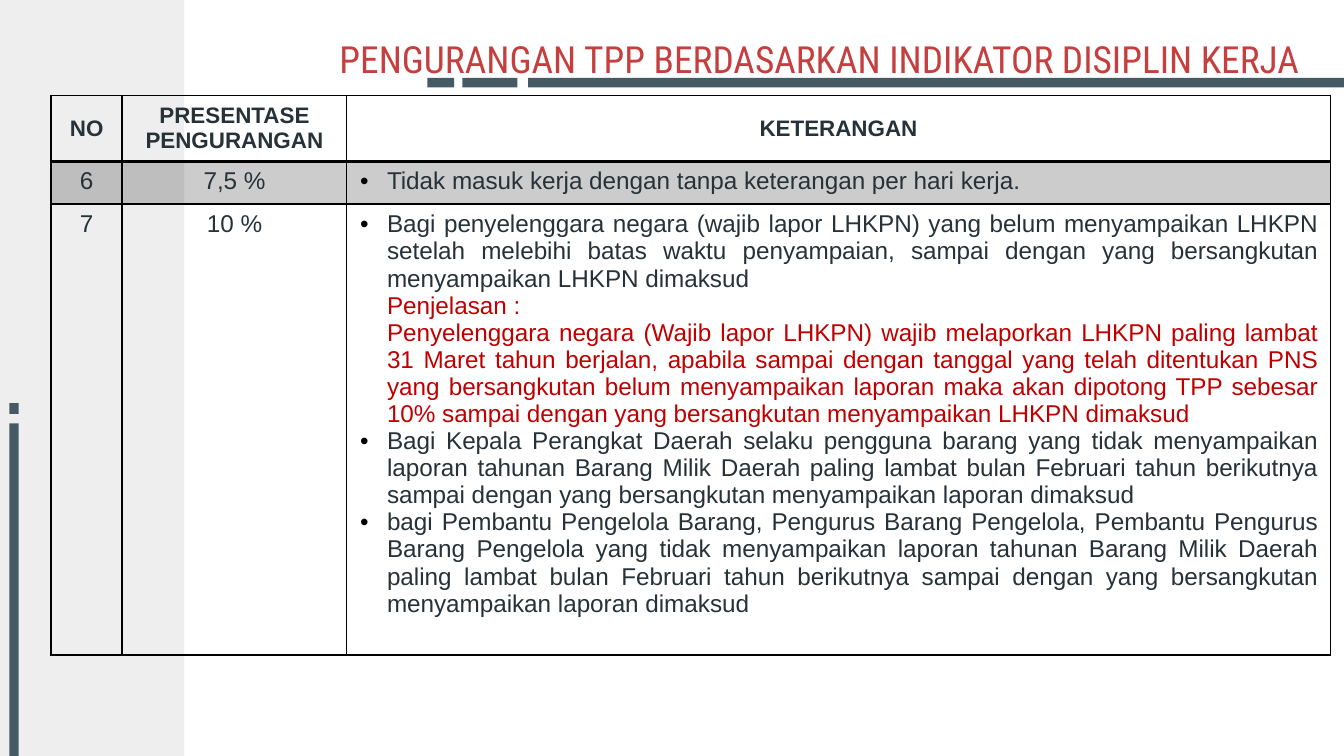
from lxml import etree
from pptx import Presentation
from pptx.dml.color import RGBColor
from pptx.enum import shapes, text
from pptx.oxml.ns import qn
from pptx.util import Inches, Pt

PALE = RGBColor(0xEE, 0xEE, 0xEE)
SLATE = RGBColor(0x45, 0x5A, 0x64)
TITLE_RED = RGBColor(0xC5, 0x3F, 0x3F)
NOTE_RED = RGBColor(0xC0, 0x00, 0x00)
INK = RGBColor(0x26, 0x32, 0x38)
BLACK = RGBColor(0, 0, 0)

SLIDE_W = 10
SLIDE_H = SLIDE_W * 9 / 16
BAR = 0.07  # thickness of the decorative bars
INDENT = 0.2
COLUMNS = (0.53, 1.67, 7.32)
ROWS = (0.49, 0.32, 3.31)
HEADERS = ("NO", "PRESENTASE\nPENGURANGAN", "KETERANGAN")

# Each remark is (text, is it a bulleted point?)
ENTRIES = (
    ("6", "7,5 %", (
        ("Tidak masuk kerja dengan tanpa keterangan per hari kerja.", True),
    )),
    ("7", "10 %", (
        ("Bagi penyelenggara negara (wajib lapor LHKPN) yang belum menyampaikan "
         "LHKPN setelah melebihi batas waktu penyampaian, sampai dengan yang "
         "bersangkutan menyampaikan LHKPN dimaksud", True),
        ("Penjelasan :", False),
        ("Penyelenggara negara (Wajib lapor LHKPN) wajib melaporkan LHKPN paling "
         "lambat 31 Maret tahun berjalan, apabila sampai dengan tanggal yang telah "
         "ditentukan PNS yang bersangkutan belum menyampaikan laporan maka akan "
         "dipotong TPP sebesar 10% sampai dengan yang bersangkutan menyampaikan "
         "LHKPN dimaksud", False),
        ("Bagi Kepala Perangkat Daerah selaku pengguna barang yang tidak "
         "menyampaikan laporan tahunan Barang Milik Daerah paling lambat bulan "
         "Februari tahun berikutnya sampai dengan yang bersangkutan menyampaikan "
         "laporan dimaksud", True),
        ("bagi Pembantu Pengelola Barang, Pengurus Barang Pengelola, Pembantu "
         "Pengurus Barang Pengelola yang tidak menyampaikan laporan tahunan Barang "
         "Milik Daerah paling lambat bulan Februari tahun berikutnya sampai dengan "
         "yang bersangkutan menyampaikan laporan dimaksud", True),
    )),
)


def add_block(s, x, y, w, h, color):
    sp = s.shapes.add_shape(shapes.MSO_SHAPE.RECTANGLE,
                            Inches(x), Inches(y), Inches(w), Inches(h))
    sp.shadow.inherit = False
    sp.fill.solid()
    sp.fill.fore_color.rgb = color
    sp.line.fill.background()


def style(p, size, color, align, bold=False, name="Arial"):
    p.alignment = align
    p.font.name, p.font.size, p.font.bold = name, Pt(size), bold
    p.font.color.rgb = color


def add_solid(parent, color, alpha=None):
    fill = etree.SubElement(parent, qn("a:solidFill"))
    clr = etree.SubElement(fill, qn("a:srgbClr"), val=str(color))
    if alpha is not None:
        etree.SubElement(clr, qn("a:alpha"), val=str(alpha * 1000))


def set_indent(p, bulleted):
    pPr = p._p.get_or_add_pPr()
    pPr.set("marL", str(Inches(INDENT)))
    pPr.set("indent", str(Inches(-INDENT if bulleted else 0)))
    if bulleted:
        clr = etree.Element(qn("a:buClr"))
        etree.SubElement(clr, qn("a:srgbClr"), val=str(BLACK))
        font = etree.Element(qn("a:buFont"), typeface="Arial")
        char = etree.Element(qn("a:buChar"), char="•")
        for i, el in enumerate((clr, font, char)):
            pPr.insert(i, el)


def finish_cell(cell, top, bottom, shaded=False):
    """Borders in points, then a translucent fill or none."""
    tcPr = cell._tc.get_or_add_tcPr()
    for tag, width in (("lnL", 1), ("lnR", 1), ("lnT", top), ("lnB", bottom)):
        add_solid(etree.SubElement(tcPr, qn("a:" + tag), w=str(Pt(width))), BLACK)
    if shaded:
        add_solid(tcPr, BLACK, 20)
    else:
        cell.fill.background()


def add_backdrop(s):
    add_block(s, -0.21, -0.08, 1.58, 5.78, PALE)
    # Bars under the title
    for x, w in ((3.93, 6.22), (3.44, 0.41), (3.18, 0.2)):
        add_block(s, x, 0.58, w, BAR, SLATE)
    # Bars at the left edge
    for y, h in ((3.15, 5.53), (3, 0.08)):
        add_block(s, 0.07, y, BAR, h, SLATE)


def add_title(s, x, y, w, h):
    tf = s.shapes.add_textbox(Inches(x), Inches(y), Inches(w), Inches(h)).text_frame
    tf.word_wrap = True
    tf.vertical_anchor = text.MSO_ANCHOR.BOTTOM
    tf.margin_left = tf.margin_right = tf.margin_top = tf.margin_bottom = Inches(0.1)
    p = tf.paragraphs[0]
    p.text = "PENGURANGAN TPP BERDASARKAN INDIKATOR DISIPLIN KERJA"
    p.line_spacing = 1.5
    style(p, 20, TITLE_RED, text.PP_ALIGN.RIGHT, name="Roboto Condensed")


def add_deductions(s, x, y):
    table = s.shapes.add_table(len(ROWS), len(COLUMNS), Inches(x), Inches(y),
                               Inches(sum(COLUMNS)), Inches(sum(ROWS))).table
    table.first_row = table.horz_banding = False
    for col, w in zip(table.columns, COLUMNS):
        col.width = Inches(w)
    for row, h in zip(table.rows, ROWS):
        row.height = Inches(h)

    # Header
    for c, label in enumerate(HEADERS):
        cell = table.cell(0, c)
        cell.text = label
        cell.vertical_anchor = text.MSO_ANCHOR.MIDDLE
        cell.margin_top = cell.margin_bottom = Inches(0.04)
        for p in cell.text_frame.paragraphs:
            style(p, 12, INK, text.PP_ALIGN.CENTER, bold=True)
        finish_cell(cell, 1, 2)

    # Entries
    for r, (number, percent, remarks) in enumerate(ENTRIES, 1):
        for c, value in enumerate((number, percent)):
            cell = table.cell(r, c)
            cell.text = value
            style(cell.text_frame.paragraphs[0], 13, INK, text.PP_ALIGN.CENTER)
        cell = table.cell(r, 2)
        cell.text = "\n".join(remark for remark, _ in remarks)
        for p, (_, bulleted) in zip(cell.text_frame.paragraphs, remarks):
            style(p, 13, INK if bulleted else NOTE_RED, text.PP_ALIGN.JUSTIFY)
            set_indent(p, bulleted)
        for c in range(len(COLUMNS)):
            finish_cell(table.cell(r, c), 2 if r == 1 else 1, 1, shaded=r == 1)


def main():
    prs = Presentation()
    prs.slide_width, prs.slide_height = Inches(SLIDE_W), Inches(SLIDE_H)
    s = prs.slides.add_slide(prs.slide_layouts[6])
    add_backdrop(s)
    add_title(s, 2.26, 0, 7.51, 0.7)
    add_deductions(s, 0.38, 0.71)
    prs.save("out.pptx")


if __name__ == "__main__":
    main()
